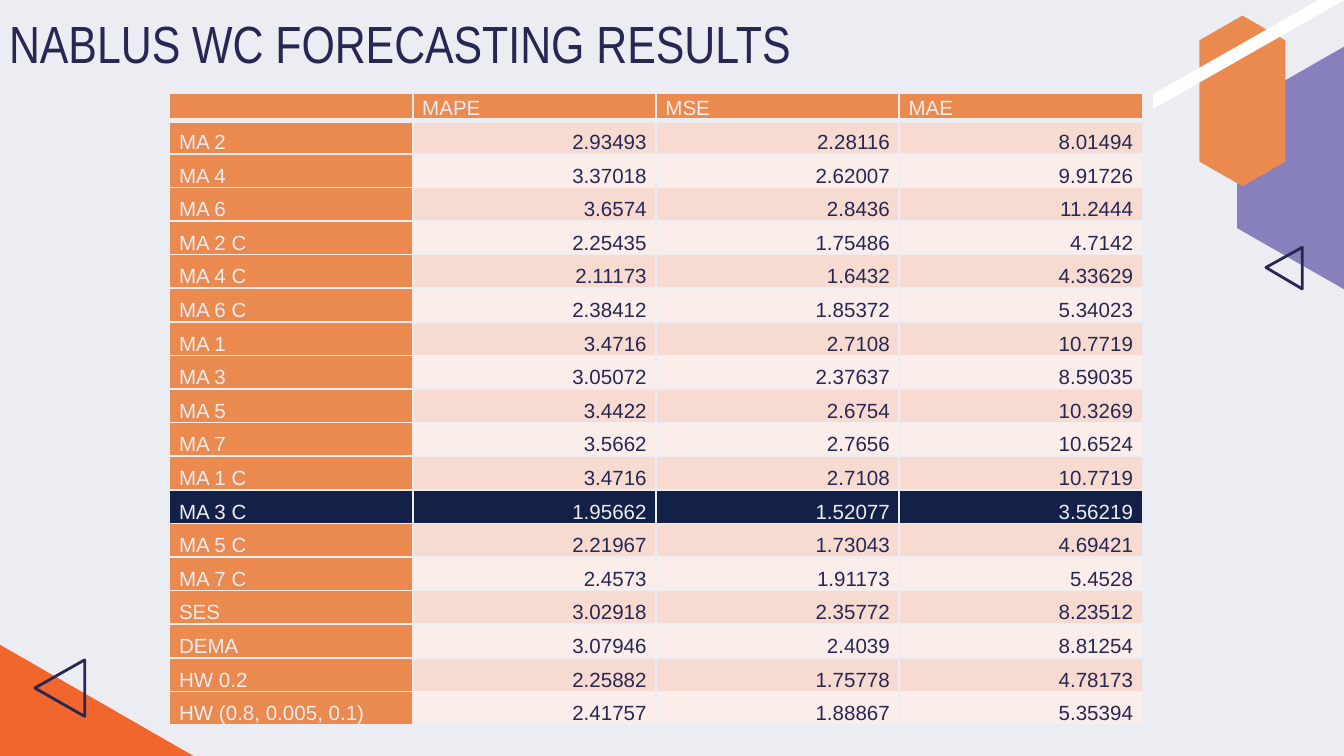
from typing import NamedTuple, Optional

from lxml import etree
from pptx import Presentation
from pptx.dml.color import RGBColor
from pptx.enum.shapes import MSO_SHAPE
from pptx.enum.text import MSO_ANCHOR, PP_ALIGN
from pptx.oxml.ns import qn
from pptx.util import Pt

HEXAGON = MSO_SHAPE.HEXAGON
MIDDLE, BOTTOM = MSO_ANCHOR.MIDDLE, MSO_ANCHOR.BOTTOM
LEFT, CENTER, RIGHT = PP_ALIGN.LEFT, PP_ALIGN.CENTER, PP_ALIGN.RIGHT

PALE, INK, NAVY = "ECEDF3", "272753", "132048"
ORANGE, RED, PURPLE, WHITE = "EA8A4F", "F1662D", "8680BC", "FFFFFF"
BANDS = ("F7DAD0", "FBEDE9")
BEST = "MA 3 C"


class Hexa(NamedTuple):
    left: float
    top: float
    width: float
    height: float
    fill: str


class Outline(NamedTuple):
    points: tuple
    fill: Optional[str] = None
    line: Optional[str] = None


class Score(NamedTuple):
    model: str
    mape: str
    mse: str
    mae: str


HEAD = Score("", "MAPE", "MSE", "MAE")
SCORES = [
    Score("MA 2", "2.93493", "2.28116", "8.01494"),
    Score("MA 4", "3.37018", "2.62007", "9.91726"),
    Score("MA 6", "3.6574", "2.8436", "11.2444"),
    Score("MA 2 C", "2.25435", "1.75486", "4.7142"),
    Score("MA 4 C", "2.11173", "1.6432", "4.33629"),
    Score("MA 6 C", "2.38412", "1.85372", "5.34023"),
    Score("MA 1", "3.4716", "2.7108", "10.7719"),
    Score("MA 3", "3.05072", "2.37637", "8.59035"),
    Score("MA 5", "3.4422", "2.6754", "10.3269"),
    Score("MA 7", "3.5662", "2.7656", "10.6524"),
    Score("MA 1 C", "3.4716", "2.7108", "10.7719"),
    Score(BEST, "1.95662", "1.52077", "3.56219"),
    Score("MA 5 C", "2.21967", "1.73043", "4.69421"),
    Score("MA 7 C", "2.4573", "1.91173", "5.4528"),
    Score("SES", "3.02918", "2.35772", "8.23512"),
    Score("DEMA", "3.07946", "2.4039", "8.81254"),
    Score("HW 0.2", "2.25882", "1.75778", "4.78173"),
    Score("HW (0.8, 0.005, 0.1)", "2.41757", "1.88867", "5.35394"),
]

# Corner decoration, from back to front
DECOR = [
    Hexa(655.2, 32.4, 130.3, 115.2, PURPLE),
    Outline(((697.7, 132.5), (678.2, 143.3), (697.7, 154.8)), line=INK),
    Hexa(619.9, 31, 91.4, 46.1, ORANGE),
    Outline(((617.8, 50.4), (758.2, -29.5), (758.2, -21.6), (617.8, 58.3)), fill=WHITE),
    Outline(((-0.7, 405), (-0.7, 345), (103.7, 405)), fill=RED),
    Outline(((45.4, 353.5), (45.4, 383.8), (18.7, 368.6)), line=INK),
]


def color(code: str) -> RGBColor:
    return RGBColor.from_string(code)


def paint(item, code: str) -> None:
    item.fill.solid()
    item.fill.fore_color.rgb = color(code)


def write(par, text: str, size: float, face: str, code: str, align) -> None:
    par.alignment = align
    run = par.add_run()
    run.text = text
    run.font.size = Pt(size)
    run.font.name = face
    run.font.color.rgb = color(code)


def draw_hexa(slide, hexa: Hexa) -> None:
    shape = slide.shapes.add_shape(HEXAGON, *(Pt(v) for v in hexa[:4]))
    shape.adjustments[0] = 0.286
    shape.rotation = 270
    shape.shadow.inherit = False
    paint(shape, hexa.fill)
    shape.line.fill.background()


def draw_outline(slide, outline: Outline) -> None:
    first, *rest = [(Pt(x), Pt(y)) for x, y in outline.points]
    pen = slide.shapes.build_freeform(*first)
    pen.add_line_segments(rest, close=True)
    shape = pen.convert_to_shape()
    shape.shadow.inherit = False
    if outline.fill:
        paint(shape, outline.fill)
    else:
        shape.fill.background()
    if outline.line:
        shape.line.color.rgb = color(outline.line)
        shape.line.width = Pt(1.5)
    else:
        shape.line.fill.background()


def draw_title(slide, text: str) -> None:
    box = slide.shapes.add_textbox(Pt(-54), Pt(0), Pt(536.4), Pt(45.4))
    frame = box.text_frame
    frame.word_wrap = True
    frame.vertical_anchor = MIDDLE
    frame.margin_left = frame.margin_right = Pt(7.2)
    frame.margin_top = frame.margin_bottom = Pt(7.2)
    write(frame.paragraphs[0], text, 28, "Arial Narrow", INK, CENTER)


def add_edges(cell, base: float) -> None:
    props = cell._tc.get_or_add_tcPr()
    widths = {"a:lnL": 1, "a:lnR": 1, "a:lnT": 1, "a:lnB": base}
    for spot, (tag, width) in enumerate(widths.items()):
        edge = etree.Element(qn(tag), w=str(Pt(width)))
        fill = etree.SubElement(edge, qn("a:solidFill"))
        etree.SubElement(fill, qn("a:srgbClr"), val=PALE)
        props.insert(spot, edge)


def fill_cell(cell, text: str, back: str, code: str, align, base: float) -> None:
    cell.margin_left = cell.margin_right = Pt(5)
    cell.margin_top = cell.margin_bottom = Pt(0)
    cell.vertical_anchor = BOTTOM
    paint(cell, back)
    add_edges(cell, base)
    par = cell.text_frame.paragraphs[0]
    if text:
        par.line_spacing = 1.07
        write(par, text, 11, "Arial", code, align)
    else:
        # Keeps the empty cell from stretching its row
        etree.SubElement(par._p, qn("a:endParaRPr"), sz="1100")


def draw_table(slide) -> None:
    rows = [HEAD, *SCORES]
    wide, low, high = 130.3, 14.4, 18
    table = slide.shapes.add_table(
        len(rows), len(HEAD), Pt(90.9), Pt(50),
        Pt(wide * len(HEAD)), Pt(low + high * len(SCORES)),
    ).table
    table.first_row = table.horz_banding = False
    for col in table.columns:
        col.width = Pt(wide)
    for r, score in enumerate(rows):
        table.rows[r].height = Pt(high if r else low)
        for c, text in enumerate(score):
            value = r > 0 and c > 0
            back, code = ORANGE, PALE
            if score.model == BEST:
                back = NAVY
            elif value:
                back, code = BANDS[(r - 1) % 2], INK
            fill_cell(table.cell(r, c), text, back, code,
                      RIGHT if value else LEFT, 1 if r else 3)


def main() -> None:
    deck = Presentation()
    deck.slide_width, deck.slide_height = Pt(720), Pt(405)
    slide = deck.slides.add_slide(deck.slide_layouts[6])
    paint(slide.background, PALE)
    for part in DECOR:
        if isinstance(part, Hexa):
            draw_hexa(slide, part)
        else:
            draw_outline(slide, part)
    draw_title(slide, "NABLUS WC FORECASTING RESULTS")
    draw_table(slide)
    deck.save("out.pptx")


if __name__ == "__main__":
    main()
